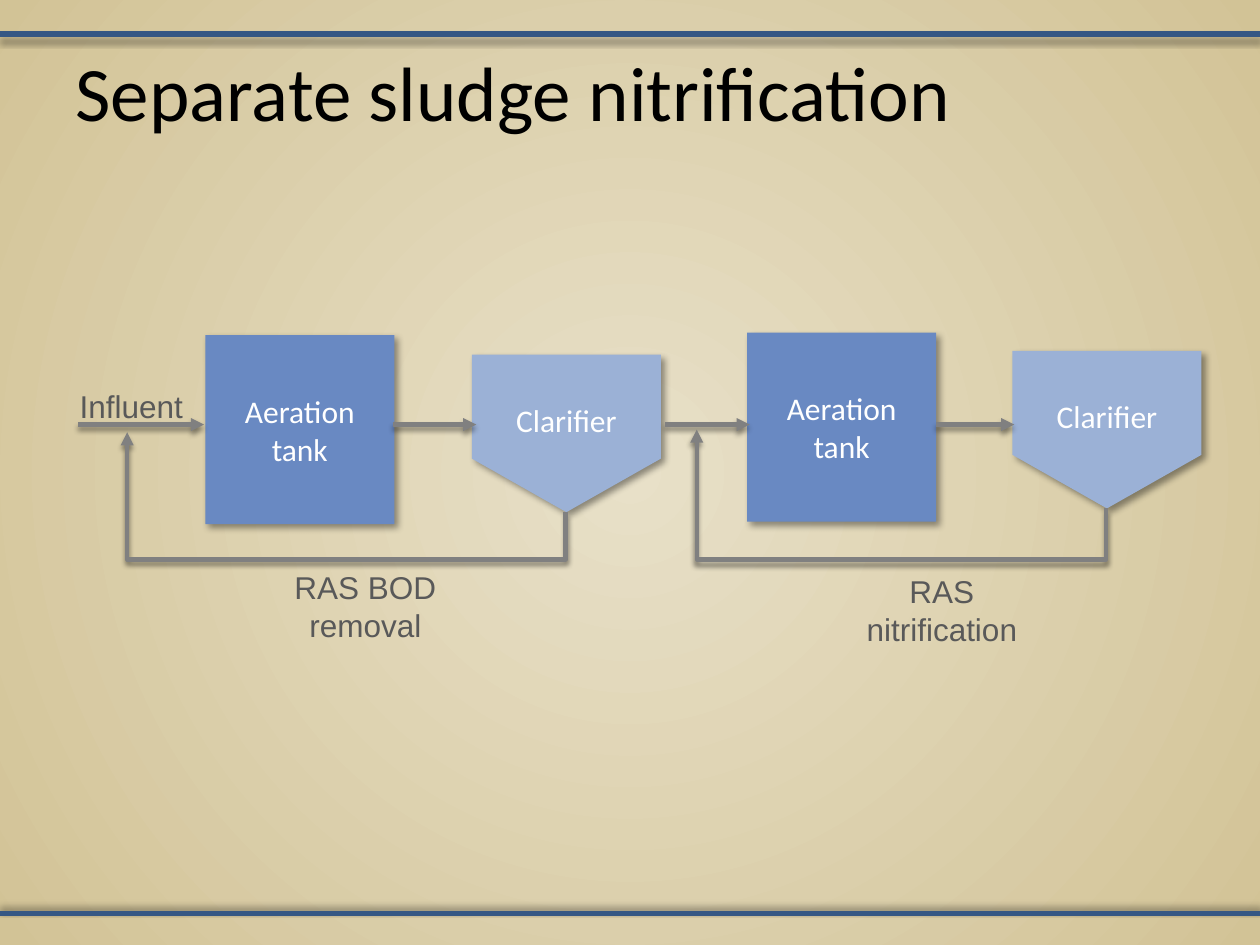
from lxml import etree
from pptx import Presentation
from pptx.dml.color import RGBColor
from pptx.enum.shapes import MSO_CONNECTOR, MSO_SHAPE
from pptx.enum.text import MSO_ANCHOR, PP_ALIGN
from pptx.oxml.ns import qn
from pptx.util import Inches, Pt

STRAIGHT, ELBOW = MSO_CONNECTOR.STRAIGHT, MSO_CONNECTOR.ELBOW
RECTANGLE, PENTAGON = MSO_SHAPE.RECTANGLE, MSO_SHAPE.PENTAGON
TOP, MIDDLE = MSO_ANCHOR.TOP, MSO_ANCHOR.MIDDLE
LEFT, CENTER, RIGHT = PP_ALIGN.LEFT, PP_ALIGN.CENTER, PP_ALIGN.RIGHT

THEME = {
    "center": "E8E0C8", "edge": "D2C396", "rule": "355784",
    "tank": "6989C2", "clarifier": "9BB1D6", "flow": "808080",
    "title": "000000", "label": "595959", "white": "FFFFFF",
    "heading_font": "Calibri", "label_font": "Arial",
    "title_size": 44, "body_size": 18, "rule_width": 3, "flow_width": 2.5,
}

TITLE = "Separate sludge nitrification"
RULES = [(0.27, 90), (7.25, 270)]
TANKS = [(1.63, 2.66), (5.93, 2.64)]
TANK_SIDE = 1.5
CLARIFIERS = [(3.87, 2.69), (8.16, 2.66)]
CLARIFIER_LENGTH, CLARIFIER_WIDTH, CLARIFIER_POINT = 1.25, 1.5, 0.34
FLOW_Y = 3.37
FLOWS = [(0.62, 1.62), (3.12, 3.78), (5.28, 5.95), (7.43, 8.05)]
RETURN_Y = 4.44
RETURNS = [((4.49, 4.06), (1.01, 3.43)), ((8.78, 4.03), (5.53, 3.41))]
LABELS = [
    ("Influent", (0.47, 3.02, 1.08, 0.4), RIGHT, 0.1),
    ("RAS BOD removal", (2.12, 4.46, 1.56, 0.71), CENTER, 0.01),
    ("RAS nitrification", (6.7, 4.49, 1.55, 0.71), CENTER, 0.1),
]


def color(name):
    return RGBColor.from_string(THEME[name])


def add_shadow(shape, opacity, blur, distance, angle):
    properties = shape._element.spPr
    effects = etree.SubElement(properties, qn("a:effectLst"))
    shadow = etree.SubElement(
        effects, qn("a:outerShdw"), blurRad=str(Pt(blur)), dist=str(Pt(distance)),
        dir=str(angle * 60000), rotWithShape="0")
    black = etree.SubElement(shadow, qn("a:srgbClr"), val="000000")
    etree.SubElement(black, qn("a:alpha"), val=str(opacity * 1000))


def write(shape, text, font, size, font_color, alignment, anchor):
    frame = shape.text_frame
    frame.word_wrap = True
    frame.vertical_anchor = anchor
    paragraph = frame.paragraphs[0]
    paragraph.alignment = alignment
    run = paragraph.add_run()
    run.text = text
    run.font.name = THEME[font]
    run.font.size = Pt(THEME[size])
    run.font.color.rgb = color(font_color)


def paint_background(slide):
    fill = slide.background.fill
    fill.gradient()
    for stop, name in zip(fill.gradient_stops, ("center", "edge")):
        stop.color.rgb = color(name)
    gradient = slide._element.find(".//" + qn("a:gradFill"))
    gradient.remove(gradient.find(qn("a:lin")))
    circle = etree.SubElement(gradient, qn("a:path"), path="circle")
    etree.SubElement(circle, qn("a:fillToRect"), l="50000", t="50000", r="50000", b="50000")


def add_line(slide, kind, start, end, line_color, width):
    line = slide.shapes.add_connector(kind, *map(Inches, start + end))
    line.line.color.rgb = color(line_color)
    line.line.width = Pt(THEME[width])
    return line


def add_flow(slide, kind, start, end):
    flow = add_line(slide, kind, start, end, "flow", "flow_width")
    etree.SubElement(flow.line._get_or_add_ln(), qn("a:tailEnd"), type="triangle")
    add_shadow(flow, 45, 3, 2.4, 90)
    return flow


def add_return(slide, start, end):
    flow = add_flow(slide, ELBOW, start, end)
    across, rise = start[0] - end[0], start[1] - end[1]
    flow.left = Inches((start[0] + end[0] - rise) / 2)
    flow.top = Inches((start[1] + end[1] - across) / 2)
    flow.width, flow.height = Inches(rise), Inches(across)
    transform = flow._element.spPr.find(qn("a:xfrm"))
    for flip in ("flipH", "flipV"):
        transform.attrib.pop(flip, None)
    transform.set("rot", "5400000")
    transform.set("flipH", "1")
    geometry = flow._element.spPr.find(qn("a:prstGeom"))
    guides = geometry.find(qn("a:avLst"))
    drop = round(-(RETURN_Y - start[1]) / rise * 100000)
    etree.SubElement(guides, qn("a:gd"), name="adj1", fmla=f"val {drop}")


def add_unit(slide, kind, box, fill, text):
    unit = slide.shapes.add_shape(kind, *map(Inches, box))
    unit.fill.solid()
    unit.fill.fore_color.rgb = color(fill)
    unit.line.fill.background()
    add_shadow(unit, 40, 4, 3, 45)
    write(unit, text, "heading_font", "body_size", "white", CENTER, MIDDLE)
    return unit


def add_label(slide, text, box, alignment, inset):
    label = slide.shapes.add_textbox(*map(Inches, box))
    label.text_frame.margin_left = label.text_frame.margin_right = Inches(inset)
    write(label, text, "label_font", "body_size", "label", alignment, TOP)


def main():
    presentation = Presentation()
    presentation.slide_width, presentation.slide_height = Inches(10), Inches(7.5)
    slide = presentation.slides.add_slide(presentation.slide_layouts[5])
    paint_background(slide)

    title = slide.shapes.title
    title.left, title.top, title.width, title.height = map(Inches, (0.5, 0.3, 9, 1.25))
    write(title, TITLE, "heading_font", "title_size", "title", LEFT, TOP)

    for y, angle in RULES:
        rule = add_line(slide, STRAIGHT, (0, y), (10, y), "rule", "rule_width")
        add_shadow(rule, 40, 4, 3, angle)
    for corner in TANKS:
        add_unit(slide, RECTANGLE, corner + (TANK_SIDE, TANK_SIDE), "tank", "Aeration tank")
    for corner in CLARIFIERS:
        box = corner + (CLARIFIER_LENGTH, CLARIFIER_WIDTH)
        clarifier = add_unit(slide, PENTAGON, box, "clarifier", "Clarifier")
        clarifier.rotation = 90
        clarifier.adjustments[0] = CLARIFIER_POINT
        clarifier.text_frame._txBody.bodyPr.set("vert", "vert270")
    for start, end in FLOWS:
        add_flow(slide, STRAIGHT, (start, FLOW_Y), (end, FLOW_Y))
    for start, end in RETURNS:
        add_return(slide, start, end)
    for label in LABELS:
        add_label(slide, *label)

    presentation.save("out.pptx")


if __name__ == "__main__":
    main()
